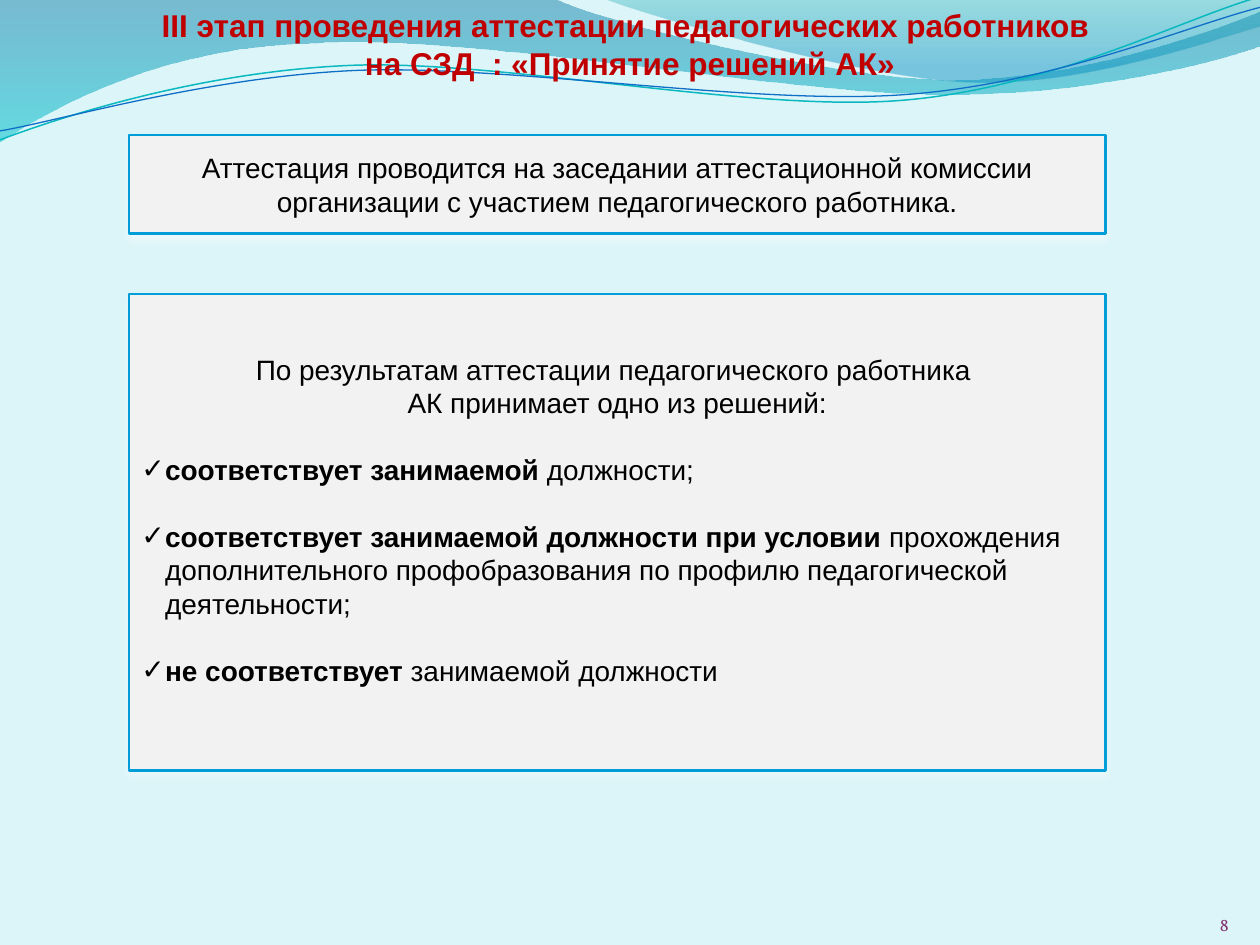
"""Builds the slide on stage III of teacher attestation: decisions of the commission."""
from lxml import etree
from pptx import Presentation
from pptx import util as u
from pptx.dml.color import RGBColor
from pptx.enum import text
from pptx.enum.shapes import MSO_SHAPE
from pptx.oxml.ns import qn

COLORS = {
    "background": "DBF5F9", "panel": "F2F2F2", "border": "009DD9",
    "shadow": "FFFFFF", "body": "000000", "title": "C00000", "number": "832F72",
    "deep": "0074A1", "cyan": "00C6CF", "teal": "00A1A9", "blue": "008BBF",
    "teal_line": "0AB8BF", "blue_line": "0F6FC6",
}
BODY = {"size": u.Pt(16), "name": "Arial", "bold": False}
TITLE = {"size": u.Pt(18), "name": "Arial", "bold": True}
NUMBER = {"size": u.Pt(10), "name": "Vollkorn"}
CENTER, RIGHT, LEFT = text.PP_ALIGN.CENTER, text.PP_ALIGN.RIGHT, text.PP_ALIGN.LEFT
PANEL_LEFT, PANEL_WIDTH = u.Cm(2.6), u.Cm(19.69)
ITEM_GAP = u.Pt(19)
HANG = u.Cm(0.48)

WIDE_WAVE = [
    [(0, 0)], [(11.18, -0.03)],
    [(12.09, 0.43), (16.87, 1.6), (19.25, 1.6)],
    [(21.67, 1.6), (24.33, 0.66), (25.4, 0.23)],
    [(25.43, 0.91)],
    [(24.97, 1.12), (22.1, 1.93), (18.95, 1.9)],
    [(15.8, 1.9), (9.7, 0.71), (6.53, 0.86)],
    [(3.28, 0.91), (1.17, 2.11), (-0.03, 2.87)],
]
RIGHT_WAVE = [
    [(12.17, -0.03)],
    [(12.93, 0.28), (17.32, 1.57), (19.53, 1.65)],
    [(21.74, 1.75), (24.41, 0.81), (25.4, 0.53)],
    [(25.4, 0)],
]
TEAL_CURVE = [
    [(0, 2.82)],
    [(1.22, 2.36), (4.01, 1.45), (7.04, 1.32)],
    [(10.03, 1.19), (15.06, 2.26), (18.11, 2.03)],
    [(21.16, 1.8), (23.83, 0.38), (25.35, -0.05)],
]
BLUE_CURVE = [
    [(0, 2.64)],
    [(1.19, 2.44), (4.17, 1.55), (7.19, 1.42)],
    [(10.24, 1.3), (15.16, 2.13), (18.21, 1.91)],
    [(21.23, 1.7), (23.9, 0.53), (25.4, 0.15)],
]
DECISIONS = [
    ("соответствует занимаемой ", "должности;"),
    ("соответствует занимаемой должности при условии ",
     "прохождения дополнительного профобразования по профилю "
     "педагогической деятельности;"),
    ("не соответствует ", "занимаемой должности"),
]


def rgb(color):
    """Return the named colour."""
    return RGBColor.from_string(COLORS[color])


def set_all(target, values):
    """Set every attribute in the dict on the target."""
    for name, value in values.items():
        setattr(target, name, value)


def add_outline(slide, segments, close):
    """Add a freeform whose three-point segments are cubic curves."""
    start, *ends = [(u.Cm(x), u.Cm(y)) for x, y in (s[-1] for s in segments)]
    builder = slide.shapes.build_freeform(*start)
    builder.add_line_segments(ends, close=close)
    outline = builder.convert_to_shape()
    outline.shadow.inherit = False
    steps = list(outline.element.spPr.iter(qn("a:lnTo")))
    for step, segment in zip(steps, segments[1:]):
        if len(segment) == 1:
            continue
        curve = etree.Element(qn("a:cubicBezTo"))
        for x, y in segment:
            etree.SubElement(curve, qn("a:pt"), x=str(u.Cm(x) - outline.left),
                             y=str(u.Cm(y) - outline.top))
        step.getparent().replace(step, curve)
    return outline


def add_wave(slide, segments, stops):
    """Add a wave with a translucent downward gradient."""
    wave = add_outline(slide, segments, True)
    wave.line.fill.background()
    wave.fill.gradient()
    wave.fill.gradient_angle = 270
    for stop, (position, color, opacity) in zip(wave.fill.gradient_stops, stops):
        stop.position = position
        stop.color.rgb = rgb(color)
        clr = wave.element.spPr.findall(".//" + qn("a:srgbClr"))[-1 if position else 0]
        etree.SubElement(clr, qn("a:alpha"), val=str(opacity * 1000))


def add_curve(slide, segments, color, width):
    """Add a thin open curve."""
    curve = add_outline(slide, segments, False)
    curve.fill.background()
    curve.line.color.rgb = rgb(color)
    curve.line.width = u.Pt(width)


def add_panel(slide, top, height):
    """Add a bordered panel with a soft shadow and return its text frame."""
    panel = slide.shapes.add_shape(MSO_SHAPE.RECTANGLE, PANEL_LEFT, top,
                                   PANEL_WIDTH, height)
    panel.fill.solid()
    panel.fill.fore_color.rgb = rgb("panel")
    panel.line.color.rgb = rgb("border")
    panel.line.width = u.Pt(1.5)
    panel.shadow.inherit = False
    effects = panel.element.spPr.find(qn("a:effectLst"))
    shadow = etree.SubElement(effects, qn("a:outerShdw"), blurRad=str(u.Pt(4.5)),
                              dist=str(u.Pt(3)), dir="5400000", rotWithShape="0")
    clr = etree.SubElement(shadow, qn("a:srgbClr"), val=COLORS["shadow"])
    etree.SubElement(clr, qn("a:alpha"), val="48000")
    set_all(panel.text_frame, {"word_wrap": True,
                               "vertical_anchor": text.MSO_ANCHOR.MIDDLE})
    return panel.text_frame


def add_box(slide, place, frame_format):
    """Add a wrapping text box and return its text frame."""
    frame = slide.shapes.add_textbox(*map(u.Cm, place)).text_frame
    set_all(frame, {"word_wrap": True, **frame_format})
    return frame


def add_run(paragraph, words, font, color):
    """Add a formatted run."""
    run = paragraph.add_run()
    run.text = words
    set_all(run.font, font)
    run.font.color.rgb = rgb(color)


def write_lines(frame, lines, font, color, align=CENTER):
    """Write one paragraph per line, beginning with the first paragraph."""
    for index, line in enumerate(lines):
        paragraph = frame.add_paragraph() if index else frame.paragraphs[0]
        paragraph.alignment = align
        add_run(paragraph, line, font, color)


def add_decision(frame, verdict, rest):
    """Add a ticked decision with a bold verdict."""
    paragraph = frame.add_paragraph()
    properties = paragraph._p.get_or_add_pPr()
    properties.set("marL", str(HANG))
    properties.set("indent", str(-HANG))
    etree.SubElement(properties, qn("a:buFont"), typeface="Arial")
    etree.SubElement(properties, qn("a:buChar"), char="✓")
    set_all(paragraph, {"alignment": LEFT, "space_before": ITEM_GAP})
    add_run(paragraph, verdict, {**BODY, "bold": True}, "body")
    add_run(paragraph, rest, BODY, "body")


def main():
    """Build and save the slide."""
    deck = Presentation()
    set_all(deck, {"slide_width": u.Cm(25.4), "slide_height": u.Cm(19.05)})
    slide = deck.slides.add_slide(deck.slide_layouts[6])
    slide.background.fill.solid()
    slide.background.fill.fore_color.rgb = rgb("background")

    add_wave(slide, WIDE_WAVE, [(0, "deep", 45), (1, "cyan", 55)])
    add_wave(slide, RIGHT_WAVE, [(0, "teal", 30), (0.8, "blue", 45)])
    add_curve(slide, TEAL_CURVE, "teal_line", 0.85)
    add_curve(slide, BLUE_CURVE, "blue_line", 0.75)

    no_margins = dict.fromkeys(
        ("margin_left", "margin_top", "margin_right", "margin_bottom"), 0)
    number = add_box(slide, (22.66, 17.83, 2.11, 1.02),
                     {**no_margins, "vertical_anchor": text.MSO_ANCHOR.BOTTOM})
    write_lines(number, ["8"], NUMBER, "number", RIGHT)

    results = add_panel(slide, u.Cm(5.93), u.Cm(9.6))
    results.margin_bottom = u.Cm(0.64)
    write_lines(results, ["По результатам аттестации педагогического работника ",
                          "АК принимает одно из решений:"], BODY, "body")
    for verdict, rest in DECISIONS:
        add_decision(results, verdict, rest)

    title = add_box(slide, (0, 0, 25.4, 1.8),
                    {"auto_size": text.MSO_AUTO_SIZE.SHAPE_TO_FIT_TEXT})
    write_lines(title, ["III этап проведения аттестации педагогических работников ",
                        "на СЗД  : «Принятие решений АК»"], TITLE, "title")

    meeting = add_panel(slide, u.Cm(2.72), u.Cm(1.99))
    write_lines(meeting, ["Аттестация проводится на заседании аттестационной комиссии "
                          "организации с участием педагогического работника."],
                BODY, "body")
    deck.save("out.pptx")


if __name__ == "__main__":
    main()
